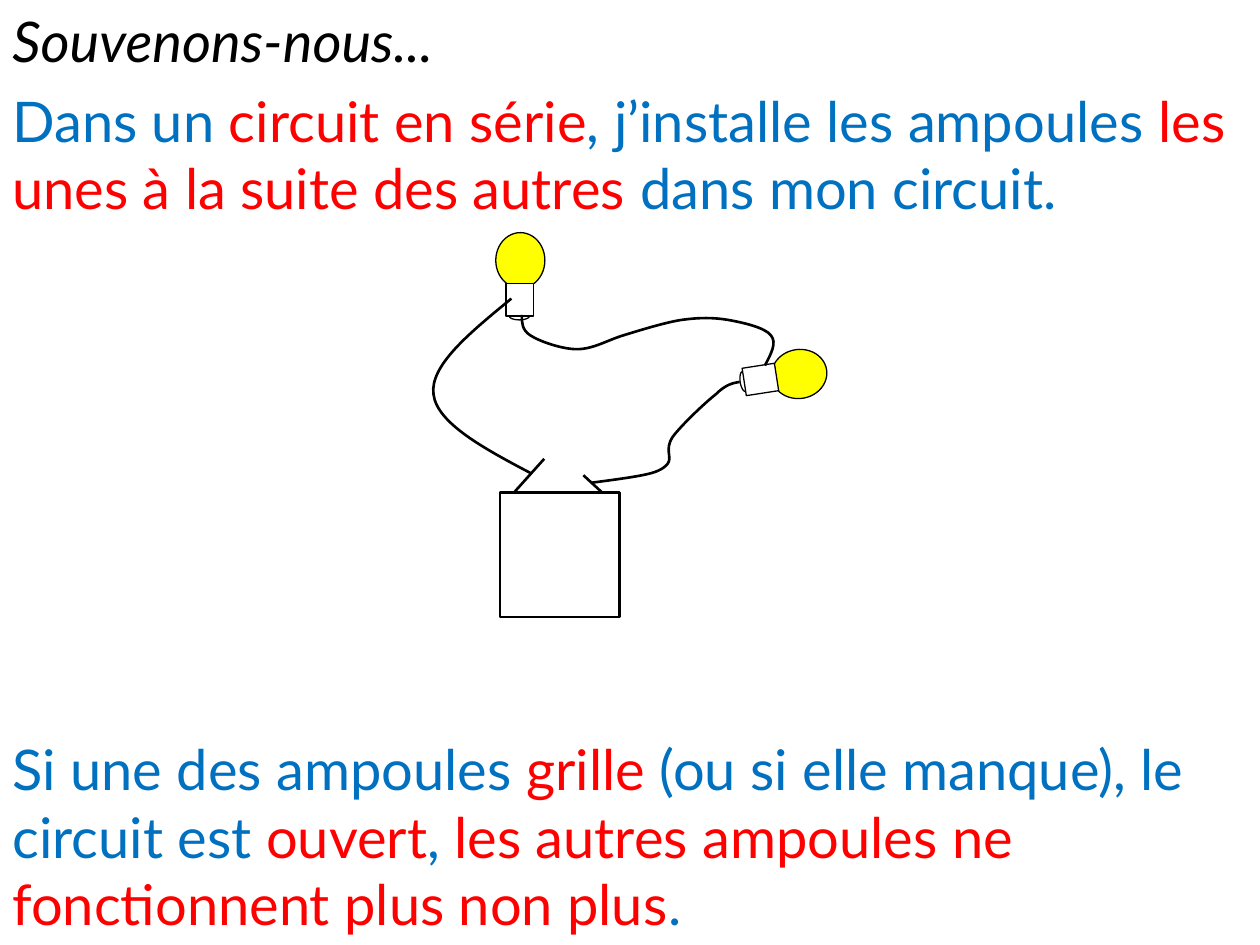
from dataclasses import dataclass
from math import cos, radians, sin

from lxml import etree
from pptx import Presentation
from pptx.dml.color import RGBColor
from pptx.enum import shapes, text
from pptx.oxml import ns
from pptx.util import Cm, Pt


@dataclass(frozen=True)
class Theme:
    font: str = "Lato"
    text_size: int = 32
    thin: float = 0.75
    thick: float = 1.5
    black: RGBColor = RGBColor(0x00, 0x00, 0x00)
    white: RGBColor = RGBColor(0xFF, 0xFF, 0xFF)
    blue: RGBColor = RGBColor(0x00, 0x70, 0xC0)
    red: RGBColor = RGBColor(0xFF, 0x00, 0x00)
    yellow: RGBColor = RGBColor(0xFF, 0xFF, 0x00)


@dataclass(frozen=True)
class BulbPart:
    """A piece of a bulb; its centre is measured from the centre of the glass."""
    kind: shapes.MSO_SHAPE
    dx: float
    dy: float
    width: float
    height: float
    fill: RGBColor


@dataclass(frozen=True)
class Bulb:
    x: float
    y: float
    angle: float


Point = tuple[float, float]
THEME = Theme()
OVAL, RECTANGLE = shapes.MSO_SHAPE.OVAL, shapes.MSO_SHAPE.RECTANGLE
SLIDE_WIDTH, SLIDE_HEIGHT = 25.4, 19.05

BULB_PARTS = [
    BulbPart(OVAL, 0, 0, 0.99, 1.12, THEME.yellow),
    BulbPart(OVAL, -0.02, 1.11, 0.43, 0.18, THEME.white),
    BulbPart(RECTANGLE, -0.01, 0.79, 0.56, 0.66, THEME.white),
]
BULBS = [Bulb(10.49, 5.25, 0), Bulb(16.11, 7.54, 81.2)]
TERMINALS = [((10.36, 9.93), (10.97, 9.25)), ((11.76, 9.58), (12.14, 9.93))]

# Each wire is a start point, then two control points and an end per Bézier curve.
WIRES = [
    [(10.52, 6.35),
     (10.52, 6.5), (10.52, 6.65), (10.69, 6.76),
     (10.87, 6.88), (11.33, 7.04), (11.63, 7.04),
     (11.96, 7.04), (12.24, 6.86), (12.57, 6.76),
     (12.93, 6.65), (13.41, 6.5), (13.74, 6.45),
     (14.1, 6.4), (14.38, 6.4), (14.68, 6.45),
     (14.96, 6.5), (15.42, 6.6), (15.54, 6.76),
     (15.67, 6.91), (15.54, 7.14), (15.42, 7.37)],
    [(14.91, 7.7),
     (14.78, 7.72), (14.63, 7.75), (14.43, 7.95),
     (14.2, 8.13), (13.72, 8.59), (13.56, 8.81),
     (13.39, 9.07), (13.56, 9.22), (13.46, 9.35),
     (13.36, 9.47), (13.21, 9.53), (12.95, 9.58),
     (12.7, 9.63), (12.32, 9.68), (11.94, 9.73)],
    [(10.72, 9.55),
     (9.75, 9.04), (8.81, 8.53), (8.74, 7.95),
     (8.66, 7.37), (9.47, 6.71), (10.31, 6.02)],
]


def add_text(slide, runs: list[tuple[str, RGBColor]], *, top: float, height: float,
             italic: bool = False) -> None:
    box = slide.shapes.add_textbox(Cm(0), Cm(top), Cm(SLIDE_WIDTH), Cm(height))
    frame = box.text_frame
    frame.word_wrap = True
    frame.auto_size = text.MSO_AUTO_SIZE.SHAPE_TO_FIT_TEXT
    for words, color in runs:
        run = frame.paragraphs[0].add_run()
        run.text = words
        run.font.name = THEME.font
        run.font.size = Pt(THEME.text_size)
        run.font.italic = italic
        run.font.color.rgb = color


def set_outline(shape, width: float) -> None:
    shape.line.color.rgb = THEME.black
    shape.line.width = Pt(width)


def add_filled_shape(group, kind: shapes.MSO_SHAPE, left: float, top: float, width: float,
                     height: float, *, fill: RGBColor, line: float, angle: float = 0) -> None:
    shape = group.shapes.add_shape(kind, Cm(left), Cm(top), Cm(width), Cm(height))
    shape.shadow.inherit = False
    shape.fill.solid()
    shape.fill.fore_color.rgb = fill
    shape.rotation = angle
    set_outline(shape, line)


def add_bulb(group, bulb: Bulb) -> None:
    """Draw the parts of a bulb, turned together about the centre of its glass."""
    cosine, sine = cos(radians(bulb.angle)), sin(radians(bulb.angle))
    for part in BULB_PARTS:
        x = bulb.x + part.dx * cosine - part.dy * sine
        y = bulb.y + part.dx * sine + part.dy * cosine
        add_filled_shape(group, part.kind, x - part.width / 2, y - part.height / 2,
                         part.width, part.height, fill=part.fill, line=THEME.thin,
                         angle=bulb.angle)


def add_terminal(group, start: Point, end: Point) -> None:
    connector = group.shapes.add_connector(
        shapes.MSO_CONNECTOR.STRAIGHT, *(Cm(value) for value in start + end))
    set_outline(connector, THEME.thick)
    etree.SubElement(connector.element.spPr, ns.qn("a:effectLst"))


def add_wire(group, points: list[Point]) -> None:
    """Join the curve ends by a freeform, then turn each segment into a Bézier curve."""
    vertices = [(Cm(x), Cm(y)) for x, y in points]
    builder = group.shapes.build_freeform(*vertices[0])
    builder.add_line_segments(vertices[3::3], close=False)
    wire = builder.convert_to_shape()
    wire.shadow.inherit = False
    wire.fill.background()
    set_outline(wire, THEME.thick)

    segments = list(wire.element.iter(ns.qn("a:lnTo")))
    for index, segment in enumerate(segments):
        curve = etree.Element(ns.qn("a:cubicBezTo"))
        for x, y in vertices[3 * index + 1:3 * index + 4]:
            etree.SubElement(curve, ns.qn("a:pt"), x=str(x - wire.left), y=str(y - wire.top))
        segment.getparent().replace(segment, curve)


def add_circuit(slide) -> None:
    group = slide.shapes.add_group_shape()
    add_filled_shape(group, RECTANGLE, 10.08, 9.93, 2.41, 2.51,
                     fill=THEME.white, line=THEME.thick)
    for start, end in TERMINALS:
        add_terminal(group, start, end)
    for bulb in BULBS:
        add_bulb(group, bulb)
    for wire in WIRES:
        add_wire(group, wire)


def main() -> None:
    presentation = Presentation()
    presentation.slide_width, presentation.slide_height = Cm(SLIDE_WIDTH), Cm(SLIDE_HEIGHT)
    slide = presentation.slides.add_slide(presentation.slide_layouts[6])
    blue, red = THEME.blue, THEME.red

    add_text(slide, [("Souvenons-nous...", THEME.black)], top=0, height=1.62, italic=True)
    add_text(slide, [
        ("Dans un ", blue), ("circuit en série", red),
        (", j’installe les ampoules ", blue), ("les unes à la suite des autres", red),
        (" dans mon circuit.", blue),
    ], top=1.62, height=3)
    add_circuit(slide)
    add_text(slide, [
        ("Si une des ampoules ", blue), ("grille", red),
        (" (ou si elle manque), le circuit est ", blue), ("ouvert", red), (", ", blue),
        ("les autres ampoules ne fonctionnent plus non plus", red), (".", blue),
    ], top=14.69, height=4.36)

    presentation.save("out.pptx")


if __name__ == "__main__":
    main()
